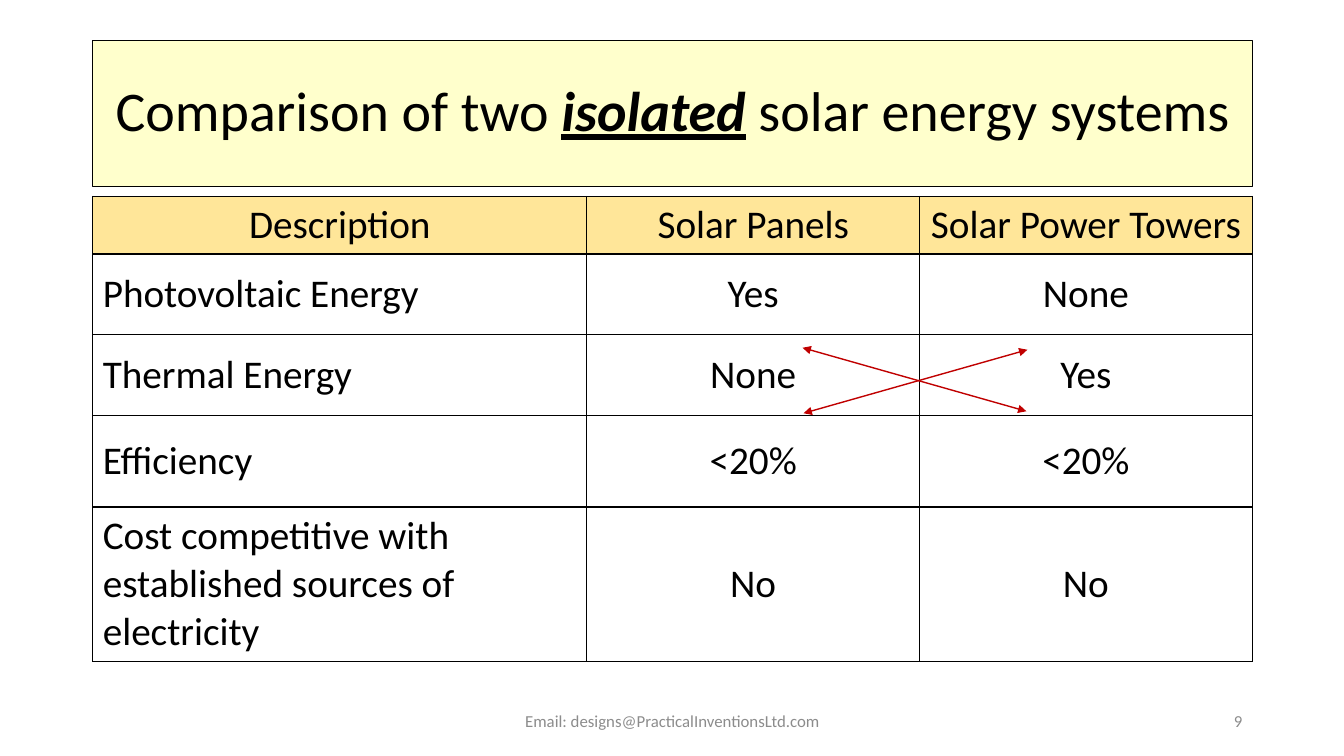
from lxml.etree import SubElement
from pptx import Presentation
from pptx.dml.color import RGBColor
from pptx.enum.shapes import MSO_CONNECTOR
from pptx.enum.text import MSO_ANCHOR, MSO_AUTO_SIZE, PP_ALIGN
from pptx.oxml.ns import qn
from pptx.util import Inches, Pt

TITLE_RUNS = [("Comparison of two ", False), ("isolated", True),
              (" solar energy systems", False)]
ROWS = [
    ("Description", "Solar Panels", "Solar Power Towers"),
    ("Photovoltaic Energy", "Yes", "None"),
    ("Thermal Energy", "None", "Yes"),
    ("Efficiency", "<20%", "<20%"),
    ("Cost competitive with established sources of electricity", "No", "No"),
]
COLUMN_WIDTHS = [4.9, 3.3, 3.3]
ROW_HEIGHTS = [0.57, 0.8, 0.8, 0.91, 1.53]
# text, left, width, alignment
FOOTERS = [
    ("Email: designs@PracticalInventionsLtd.com", 4.42, 4.5, PP_ALIGN.CENTER),
    ("9", 9.42, 3, PP_ALIGN.RIGHT),
]
# start x, start y, end x, end y
ARROWS = [(10.19, 3.47, 7.97, 4.1), (7.96, 3.45, 10.18, 4.08)]

LEFT, WIDTH = 0.92, 11.5
FONT = "Calibri"
BLACK = RGBColor(0x00, 0x00, 0x00)
GRAY = RGBColor(0x8C, 0x8C, 0x8C)
RED = RGBColor(0xC0, 0x00, 0x00)
PALE_YELLOW = RGBColor(0xFF, 0xFF, 0xCC)
GOLD = RGBColor(0xFF, 0xE6, 0x99)


def add_run(para, text, size, color=BLACK):
    span = para.add_run()
    span.text = text
    span.font.name = FONT
    span.font.size = Pt(size)
    span.font.color.rgb = color
    return span


def add_title(page):
    title = page.shapes.title
    title.left, title.top = Inches(LEFT), Inches(0.4)
    title.width, title.height = Inches(WIDTH), Inches(1.45)
    title.fill.solid()
    title.fill.fore_color.rgb = PALE_YELLOW
    title.line.color.rgb = BLACK
    title.line.width = Pt(0.75)
    frame = title.text_frame
    frame.auto_size = MSO_AUTO_SIZE.NONE
    frame.word_wrap = True
    frame.vertical_anchor = MSO_ANCHOR.MIDDLE
    para = frame.paragraphs[0]
    para.alignment = PP_ALIGN.CENTER
    para.line_spacing = 0.9
    for text, emphasized in TITLE_RUNS:
        font = add_run(para, text, 40).font
        font.bold = font.italic = font.underline = emphasized


def add_borders(cell):
    properties = cell._tc.get_or_add_tcPr()
    for side in ("lnL", "lnR", "lnT", "lnB"):
        line = SubElement(properties, qn(f"a:{side}"), w=str(Pt(1)))
        fill = SubElement(line, qn("a:solidFill"))
        SubElement(fill, qn("a:srgbClr"), val=str(BLACK))


def add_comparison(page):
    table = page.shapes.add_table(
        len(ROWS), len(COLUMN_WIDTHS), Inches(LEFT), Inches(1.95),
        Inches(WIDTH), Inches(sum(ROW_HEIGHTS))).table
    table.first_row = table.horz_banding = False
    for column, width in zip(table.columns, COLUMN_WIDTHS):
        column.width = Inches(width)
    for row, height in zip(table.rows, ROW_HEIGHTS):
        row.height = Inches(height)
    for r, row in enumerate(ROWS):
        for c, text in enumerate(row):
            cell = table.cell(r, c)
            add_borders(cell)
            if r == 0:
                cell.fill.solid()
                cell.fill.fore_color.rgb = GOLD
            else:
                cell.fill.background()
                cell.vertical_anchor = MSO_ANCHOR.MIDDLE
            para = cell.text_frame.paragraphs[0]
            para.alignment = PP_ALIGN.LEFT if r and c == 0 else PP_ALIGN.CENTER
            add_run(para, text, 28)


def add_footer(page, text, left, width, alignment):
    box = page.shapes.add_textbox(Inches(left), Inches(6.95), Inches(width), Inches(0.4))
    frame = box.text_frame
    frame.word_wrap = True
    frame.vertical_anchor = MSO_ANCHOR.MIDDLE
    para = frame.paragraphs[0]
    para.alignment = alignment
    add_run(para, text, 12, GRAY)


def add_double_arrow(page, *ends):
    arrow = page.shapes.add_connector(MSO_CONNECTOR.STRAIGHT, *map(Inches, ends))
    arrow.line.color.rgb = RED
    arrow.line.width = Pt(1)
    properties = arrow._element.spPr
    line = properties.find(qn("a:ln"))
    for end in ("headEnd", "tailEnd"):
        SubElement(line, qn(f"a:{end}"), type="triangle")
    SubElement(properties, qn("a:effectLst"))


def main():
    deck = Presentation()
    deck.slide_width, deck.slide_height = Inches(13.33), Inches(7.5)
    page = deck.slides.add_slide(deck.slide_layouts.get_by_name("Title Only"))
    add_title(page)
    for footer in FOOTERS:
        add_footer(page, *footer)
    add_comparison(page)
    for ends in ARROWS:
        add_double_arrow(page, *ends)
    deck.save("out.pptx")


if __name__ == "__main__":
    main()
